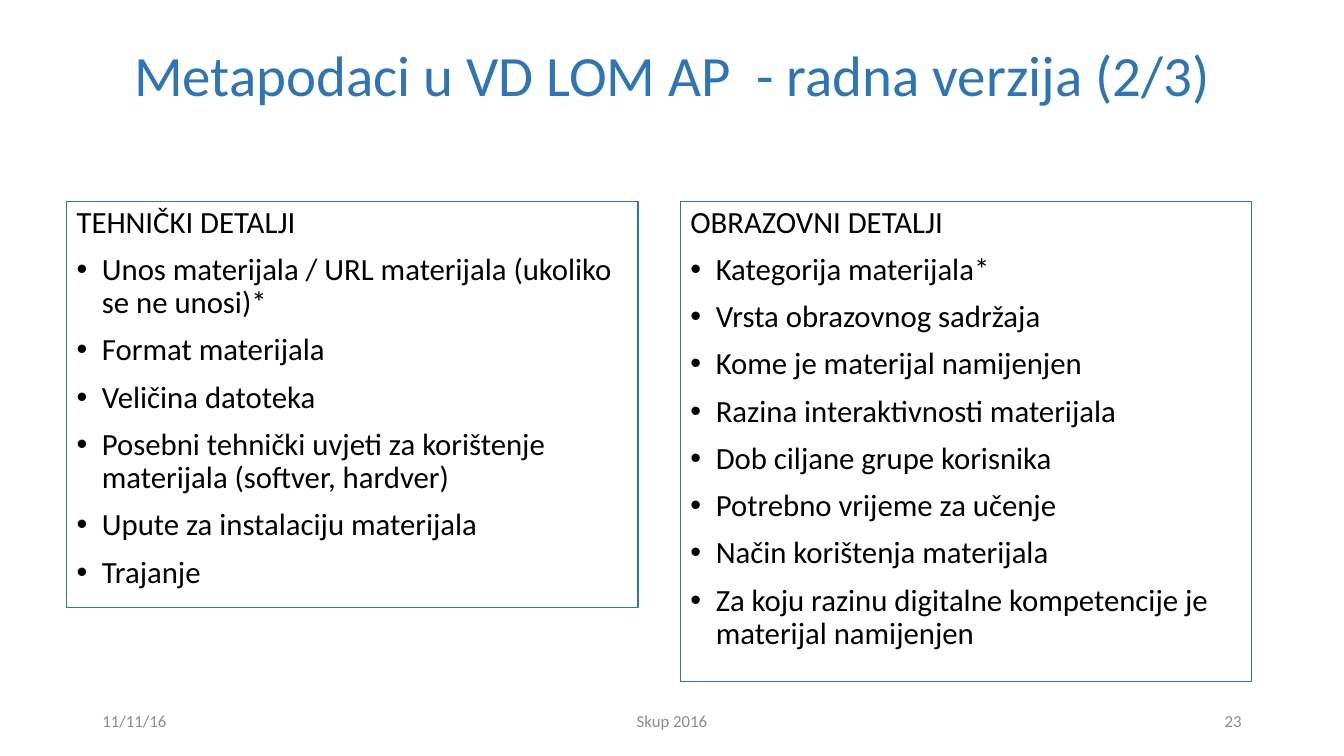
from dataclasses import dataclass

from lxml.etree import SubElement
from pptx import Presentation
from pptx.dml.color import RGBColor
from pptx.enum.text import MSO_ANCHOR, PP_ALIGN
from pptx.oxml.ns import qn
from pptx.util import Cm, Pt

TITLE = "Metapodaci u VD LOM AP  - radna verzija (2/3)"

# heading, panel height in cm, items
PANELS = [
    ("TEHNIČKI DETALJI", 10.24, [
        "Unos materijala / URL materijala (ukoliko se ne unosi)*",
        "Format materijala",
        "Veličina datoteka",
        "Posebni tehnički uvjeti za korištenje materijala (softver, hardver)",
        "Upute za instalaciju materijala",
        "Trajanje",
    ]),
    ("OBRAZOVNI DETALJI", 12.09, [
        "Kategorija materijala*",
        "Vrsta obrazovnog sadržaja",
        "Kome je materijal namijenjen",
        "Razina interaktivnosti materijala",
        "Dob ciljane grupe korisnika",
        "Potrebno vrijeme za učenje",
        "Način korištenja materijala",
        "Za koju razinu digitalne kompetencije je materijal namijenjen",
    ]),
]

# text, left and width in cm, alignment
FOOTER = [
    ("11/11/16", 2.33, 7.62, PP_ALIGN.LEFT),
    ("Skup 2016", 11.22, 11.43, PP_ALIGN.CENTER),
    ("23", 23.92, 7.62, PP_ALIGN.RIGHT),
]


@dataclass(frozen=True)
class Theme:
    font: str = "Calibri"
    accent: RGBColor = RGBColor(0x2E, 0x75, 0xB6)
    body: RGBColor = RGBColor(0, 0, 0)
    muted: RGBColor = RGBColor(0x8C, 0x8C, 0x8C)
    title_size: float = 40.7
    body_size: float = 22
    footer_size: float = 12


THEME = Theme()
PANEL_LEFT, PANEL_TOP, PANEL_WIDTH, PANEL_PITCH = 1.68, 5.08, 14.4, 15.47
BULLET_INDENT = Cm(0.64)


def style(paragraph, size, color, align=PP_ALIGN.LEFT):
    paragraph.alignment = align
    paragraph.font.name = THEME.font
    paragraph.font.size = Pt(size)
    paragraph.font.color.rgb = color


def add_bullet(paragraph):
    properties = paragraph._p.get_or_add_pPr()
    properties.set("marL", str(BULLET_INDENT))
    properties.set("indent", str(-BULLET_INDENT))
    SubElement(properties, qn("a:buFont")).set("typeface", "Arial")
    SubElement(properties, qn("a:buChar")).set("char", "•")


def add_box(page, left, top, width, height, anchor):
    box = page.shapes.add_textbox(Cm(left), Cm(top), Cm(width), Cm(height))
    box.text_frame.word_wrap = True
    box.text_frame.vertical_anchor = anchor
    return box


def add_label(page, text, area, size, color, align):
    """Add one vertically centred line of text and return its paragraph."""
    para = add_box(page, *area, MSO_ANCHOR.MIDDLE).text_frame.paragraphs[0]
    para.text = text
    style(para, size, color, align)
    return para


def add_panel(page, left, height, heading, items):
    box = add_box(page, left, PANEL_TOP, PANEL_WIDTH, height, MSO_ANCHOR.TOP)
    box.line.color.rgb = THEME.accent
    box.line.width = Pt(0.75)
    frame = box.text_frame
    frame.text = "\n".join([heading, *items])
    for number, para in enumerate(frame.paragraphs):
        style(para, THEME.body_size, THEME.body)
        para.line_spacing = 0.9
        para.space_before = Pt(10)
        if number:
            add_bullet(para)


def main():
    deck = Presentation()
    deck.slide_width, deck.slide_height = Cm(33.87), Cm(19.05)
    page = deck.slides.add_slide(deck.slide_layouts[6])

    for column, (heading, height, items) in enumerate(PANELS):
        add_panel(page, PANEL_LEFT + column * PANEL_PITCH, height, heading, items)

    title = add_label(page, TITLE, (2.33, 0.89, 29.21, 2.13),
                      THEME.title_size, THEME.accent, PP_ALIGN.CENTER)
    title.line_spacing = 0.9

    for text, left, width, align in FOOTER:
        add_label(page, text, (left, 17.66, width, 1.01),
                  THEME.footer_size, THEME.muted, align)

    deck.save("out.pptx")


if __name__ == "__main__":
    main()
